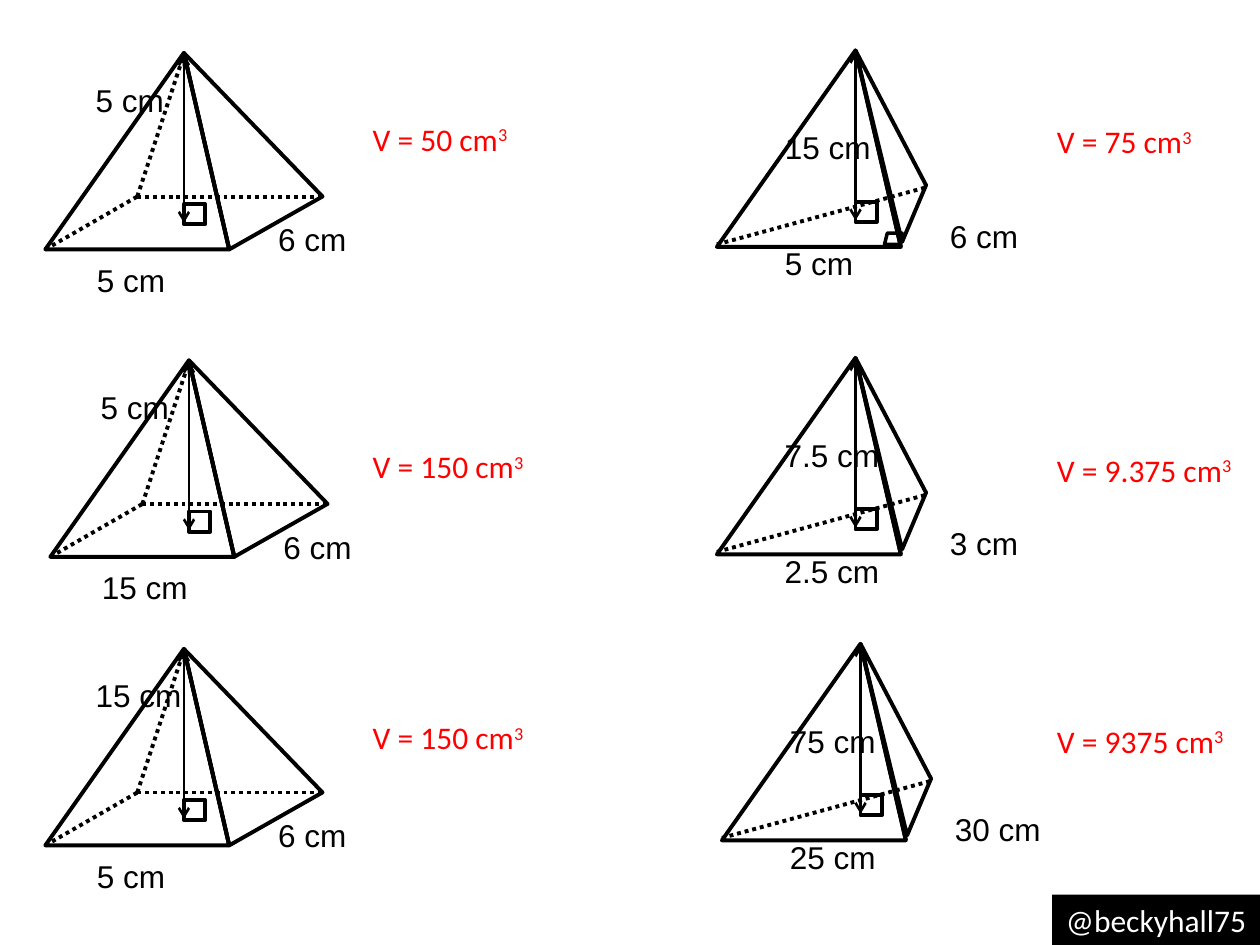
"""Build a slide of six pyramids with their dimensions and volumes."""
from lxml.etree import SubElement
from pptx import Presentation
from pptx.dml.color import RGBColor
from pptx.enum.dml import MSO_LINE
from pptx.enum.shapes import MSO_CONNECTOR, MSO_SHAPE
from pptx.enum.text import MSO_AUTO_SIZE
from pptx.oxml.ns import qn
from pptx.util import Inches, Pt

COLOURS = {"ink": "000000", "paper": "FFFFFF", "answer": "FF0000"}
CELL = Inches(0.1)
COLUMNS, ROWS = 100, 75
LABEL_HEIGHT = 4


def cells(*counts):
    return [round(count * CELL) for count in counts]


def write(frame, words, font="Arial", colour="ink", wrap=False, power=""):
    frame.word_wrap = wrap
    frame.auto_size = MSO_AUTO_SIZE.SHAPE_TO_FIT_TEXT
    for part in filter(None, (words, power)):
        run = frame.paragraphs[0].add_run()
        run.text = part
        run.font.size = Pt(18)
        run.font.name = font
        run.font.color.rgb = RGBColor.from_string(COLOURS[colour])
        if part == power:
            run.font._element.set("baseline", "30000")


FRONT_LEFT, FRONT_RIGHT, BACK_RIGHT, BACK_LEFT = (-11, 15.6), (3.6, 15.6), (11, 11.4), (-3.7, 11.4)
APEX, FOOT = (0, 0.1), (0, 13.5)
BASE = [FRONT_LEFT, BACK_LEFT, BACK_RIGHT, FRONT_RIGHT]
FRONT = [FRONT_LEFT, FRONT_RIGHT, (0, 0)]

KINDS = {
    "rectangular": {
        "side": [FRONT_RIGHT, BACK_RIGHT, (0, 0)],
        "hidden": [(BACK_LEFT, APEX), (FRONT_LEFT, BACK_LEFT), (BACK_LEFT, BACK_RIGHT)],
        "labels": [(-7.9, 16), (-8, 1.7), (6.5, 12.8)],
    },
    "triangular": {
        "side": [(3.7, 15.2), (5.6, 10.7), (0, 0)],
        "hidden": [((-11, 15.4), (5.5, 10.9))],
        "labels": [(-6.6, 14.9), (-6.6, 5.7), (6.5, 12.7)],
    },
}

PYRAMIDS = [
    ("rectangular", 14.6, 4.2, ("5 cm", "5 cm", "6 cm"), "V = 50 cm", 28.6, 9),
    ("rectangular", 15, 28.6, ("15 cm", "5 cm", "6 cm"), "V = 150 cm", 28.6, 35),
    ("rectangular", 14.6, 51.5, ("5 cm", "15 cm", "6 cm"), "V = 150 cm", 28.6, 56.5),
    ("triangular", 67.9, 4, ("5 cm", "15 cm", "6 cm"), "V = 75 cm", 82.9, 9.2),
    ("triangular", 67.9, 28.4, ("2.5 cm", "7.5 cm", "3 cm"), "V = 9.375 cm", 82.9, 35.3),
    ("triangular", 68.3, 51.1, ("25 cm", "75 cm", "30 cm"), "V = 9375 cm", 82.9, 56.8),
]

deck = Presentation()
deck.slide_width, deck.slide_height = cells(COLUMNS, ROWS)
slide = deck.slides.add_slide(deck.slide_layouts[6])
ink, paper = (RGBColor.from_string(COLOURS[name]) for name in ("ink", "paper"))

credit = slide.shapes.add_shape(MSO_SHAPE.RECTANGLE, *cells(83.5, 71, 16.5, LABEL_HEIGHT))
credit.shadow.inherit = False
credit.fill.solid()
credit.fill.fore_color.rgb = ink
credit.line.fill.background()
write(credit.text_frame, "@beckyhall75", font="Calibri", colour="paper", wrap=True)

for kind, x, y, lengths, volume, volume_x, volume_y in PYRAMIDS:
    layout = KINDS[kind]
    solid = slide.shapes.add_group_shape().shapes

    for corners in (BASE, FRONT, layout["side"], [FRONT_RIGHT, (0, 0)]):
        points = [cells(x + dx, y + dy) for dx, dy in corners]
        outline = solid.build_freeform(*points[0])
        outline.add_line_segments(points[1:], close=len(points) > 2)
        face = outline.convert_to_shape()
        face.shadow.inherit = False
        if corners is BASE:
            face.fill.solid()
            face.fill.fore_color.rgb = paper
            face.line.fill.background()
        else:
            face.fill.background()
            face.line.color.rgb = ink
            face.line.width = Pt(2.25)

    for start, end in layout["hidden"] + [(APEX, FOOT)]:
        edge = solid.add_connector(
            MSO_CONNECTOR.STRAIGHT,
            *cells(x + start[0], y + start[1], x + end[0], y + end[1]),
        )
        edge.line.color.rgb = ink
        properties = edge._element.spPr
        SubElement(properties, qn("a:effectLst"))
        if end == FOOT:
            edge.line.width = Pt(1.5)
            for tip in ("a:headEnd", "a:tailEnd"):
                SubElement(properties.find(qn("a:ln")), qn(tip), type="arrow")
        else:
            edge.line.width = Pt(2.25)
            edge.line.dash_style = MSO_LINE.ROUND_DOT

    right_angles = [(solid, MSO_SHAPE.RECTANGLE, (0, 12, 1.7, 1.6), 2.25)]
    if volume == "V = 75 cm":
        right_angles.append((slide.shapes, MSO_SHAPE.PARALLELOGRAM, (2.3, 14.5, 1.4, 0.9), 2))
    for home, preset, (dx, dy, width, height), weight in right_angles:
        marker = home.add_shape(preset, *cells(x + dx, y + dy, width, height))
        marker.shadow.inherit = False
        marker.fill.background()
        marker.line.color.rgb = ink
        marker.line.width = Pt(weight)

    for length, (dx, dy) in zip(lengths, layout["labels"]):
        width = 6.1 + sum(0.7 if mark == "." else 1.4 for mark in length.split()[0])
        label = solid.add_textbox(*cells(x + dx, y + dy, width, LABEL_HEIGHT))
        write(label.text_frame, length)

    answer = slide.shapes.add_textbox(
        *cells(volume_x, volume_y, min(27.4, COLUMNS - volume_x), LABEL_HEIGHT)
    )
    write(answer.text_frame, volume, font="Calibri", colour="answer", wrap=True, power="3")

deck.save("out.pptx")
